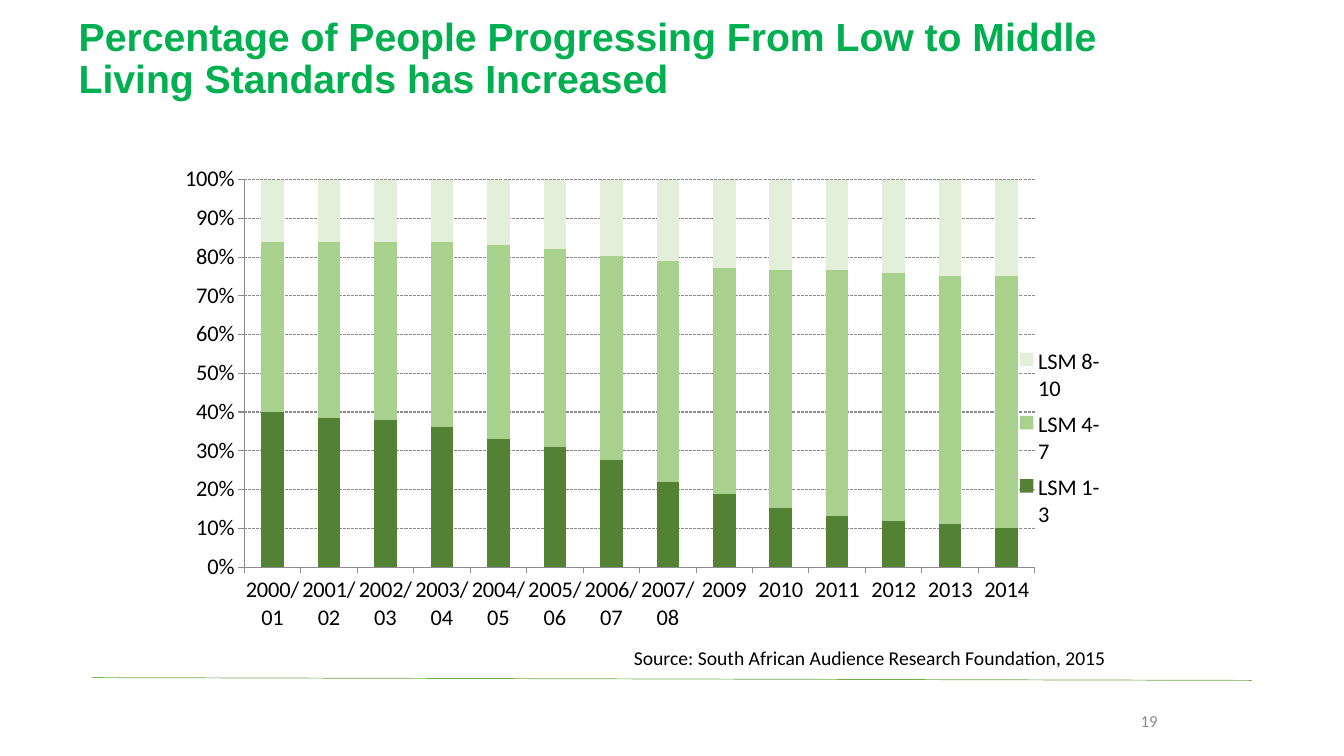
from dataclasses import dataclass

from lxml import etree
from pptx import Presentation
from pptx import util as u
from pptx.chart.data import CategoryChartData
from pptx.dml.color import RGBColor
from pptx.enum import chart as ch, dml, shapes, text
from pptx.oxml import parse_xml
from pptx.oxml.ns import nsdecls, qn


@dataclass(frozen=True)
class Theme:
    heading_font: str = "Arial"
    body_font: str = "Calibri"
    title: str = "00B050"
    ink: str = "000000"
    muted: str = "8C8C8C"
    rule: str = "70AD47"
    low: str = "548235"
    middle: str = "A9D18E"
    high: str = "E2F0D9"
    title_size: int = 28
    chart_size: int = 16
    source_size: int = 14
    number_size: int = 12


class SlideBuilder:
    def __init__(self, slide, theme):
        self.s = slide
        self.theme = theme

    def style(self, font, size, color, name=None, bold=False):
        font.name = name or self.theme.body_font
        font.size = u.Pt(size)
        font.bold = bold
        font.color.rgb = RGBColor.from_string(color)

    def title(self, words, *box):
        sp = self.s.shapes.title
        sp.left, sp.top, sp.width, sp.height = map(u.Pt, box)
        tf = sp.text_frame
        tf.text = words
        tf.word_wrap = True
        tf.auto_size = text.MSO_AUTO_SIZE.NONE
        tf.vertical_anchor = text.MSO_ANCHOR.MIDDLE
        p = tf.paragraphs[0]
        p.alignment = text.PP_ALIGN.LEFT
        p.line_spacing = 0.9
        self.style(p.runs[0].font, self.theme.title_size, self.theme.title,
                   self.theme.heading_font, bold=True)

    def label(self, words, box, size, color, align=text.PP_ALIGN.LEFT,
              anchor=text.MSO_ANCHOR.TOP):
        tf = self.s.shapes.add_textbox(*map(u.Pt, box)).text_frame
        tf.text = words
        tf.word_wrap = True
        tf.vertical_anchor = anchor
        p = tf.paragraphs[0]
        p.alignment = align
        self.style(p.runs[0].font, size, color)

    def rule(self, *ends):
        line = self.s.shapes.add_connector(
            shapes.MSO_CONNECTOR.STRAIGHT, *map(u.Pt, ends))
        line.line.color.rgb = RGBColor.from_string(self.theme.rule)
        line.line.width = u.Pt(0.5)
        etree.SubElement(line._element.spPr, qn("a:effectLst"))

    def manual_layout(self, parent, index, x, y, w, h, inner=False):
        for old in parent.findall(qn("c:layout")):
            parent.remove(old)
        target = '<c:layoutTarget val="inner"/>' if inner else ""
        parent.insert(index, parse_xml(
            f'<c:layout {nsdecls("c")}><c:manualLayout>{target}'
            '<c:xMode val="edge"/><c:yMode val="edge"/>'
            f'<c:x val="{x}"/><c:y val="{y}"/><c:w val="{w}"/><c:h val="{h}"/>'
            '</c:manualLayout></c:layout>'))

    def axis(self, axis):
        axis.major_tick_mark = ch.XL_TICK_MARK.OUTSIDE
        axis.minor_tick_mark = ch.XL_TICK_MARK.NONE
        self.style(axis.tick_labels.font, self.theme.chart_size, self.theme.ink)
        self.thin_line(axis.format.line)

    def thin_line(self, line):
        line.color.rgb = RGBColor.from_string(self.theme.muted)
        line.width = u.Pt(0.75)

    def stacked_chart(self, categories, series, *box):
        data = CategoryChartData()
        data.categories = categories
        for name, values, _ in series:
            data.add_series(name, values)
        chart = self.s.shapes.add_chart(
            ch.XL_CHART_TYPE.COLUMN_STACKED_100, *map(u.Pt, box), data).chart
        chart.has_title = False
        self.style(chart.font, self.theme.chart_size, self.theme.ink)

        # Columns
        plot = chart.plots[0]
        plot.gap_width, plot.overlap = 150, 100
        plot.vary_by_categories = False
        for column, (_, _, color) in zip(plot.series, series):
            column.format.fill.solid()
            column.format.fill.fore_color.rgb = RGBColor.from_string(color)

        # Axes and gridlines
        self.axis(chart.category_axis)
        values = chart.value_axis
        self.axis(values)
        values.minimum_scale, values.maximum_scale, values.major_unit = 0, 1, 0.1
        values.tick_labels.number_format = "0%"
        values.tick_labels.number_format_is_linked = False
        grid = values.major_gridlines.format.line
        self.thin_line(grid)
        grid.dash_style = dml.MSO_LINE.SQUARE_DOT

        # Legend and plot position
        chart.has_legend = True
        legend = chart.legend
        legend.position = ch.XL_LEGEND_POSITION.RIGHT
        legend.include_in_layout = False
        self.style(legend.font, self.theme.chart_size, self.theme.ink)
        self.manual_layout(legend._element, 1, 0.86, 0.38, 0.09, 0.41)
        plot_area = chart._chartSpace.chart.plotArea
        self.manual_layout(plot_area, 0, 0.08, 0.05, 0.8, 0.8, inner=True)


def main():
    prs = Presentation()
    prs.slide_width, prs.slide_height = u.Pt(960), u.Pt(540)
    theme = Theme()
    page = SlideBuilder(prs.slides.add_slide(prs.slide_layouts[5]), theme)

    # Title and footer rule
    page.rule(66, 484, 894, 486)
    page.title("Percentage of People Progressing From Low to Middle "
               "Living Standards has Increased", 49, -9.4, 828, 104.4)

    # Living standards by year
    years = [f"{y}/{y - 1999:02d}" for y in range(2000, 2008)]
    years += [str(y) for y in range(2009, 2015)]
    page.stacked_chart(years, [
        ("LSM 1-3", [40, 38, 38, 36, 33, 31, 28, 22, 19, 15, 13, 12, 11, 10],
         theme.low),
        ("LSM 4-7", [44, 45, 46, 48, 50, 51, 53, 57, 59, 61, 63, 64, 64, 65],
         theme.middle),
        ("LSM 8-10", [16, 16, 16, 16, 17, 18, 20, 21, 23, 23, 23, 24, 25, 25],
         theme.high),
    ], 118, 111, 706, 346)

    # Source and page number
    page.label("Source: South African Audience Research Foundation, 2015",
               (445.7, 458, 360, 24.5), theme.source_size, theme.ink)
    page.label("19", (798, 497, 36, 36), theme.number_size, theme.muted,
               text.PP_ALIGN.RIGHT, text.MSO_ANCHOR.MIDDLE)

    prs.save("out.pptx")


if __name__ == "__main__":
    main()
